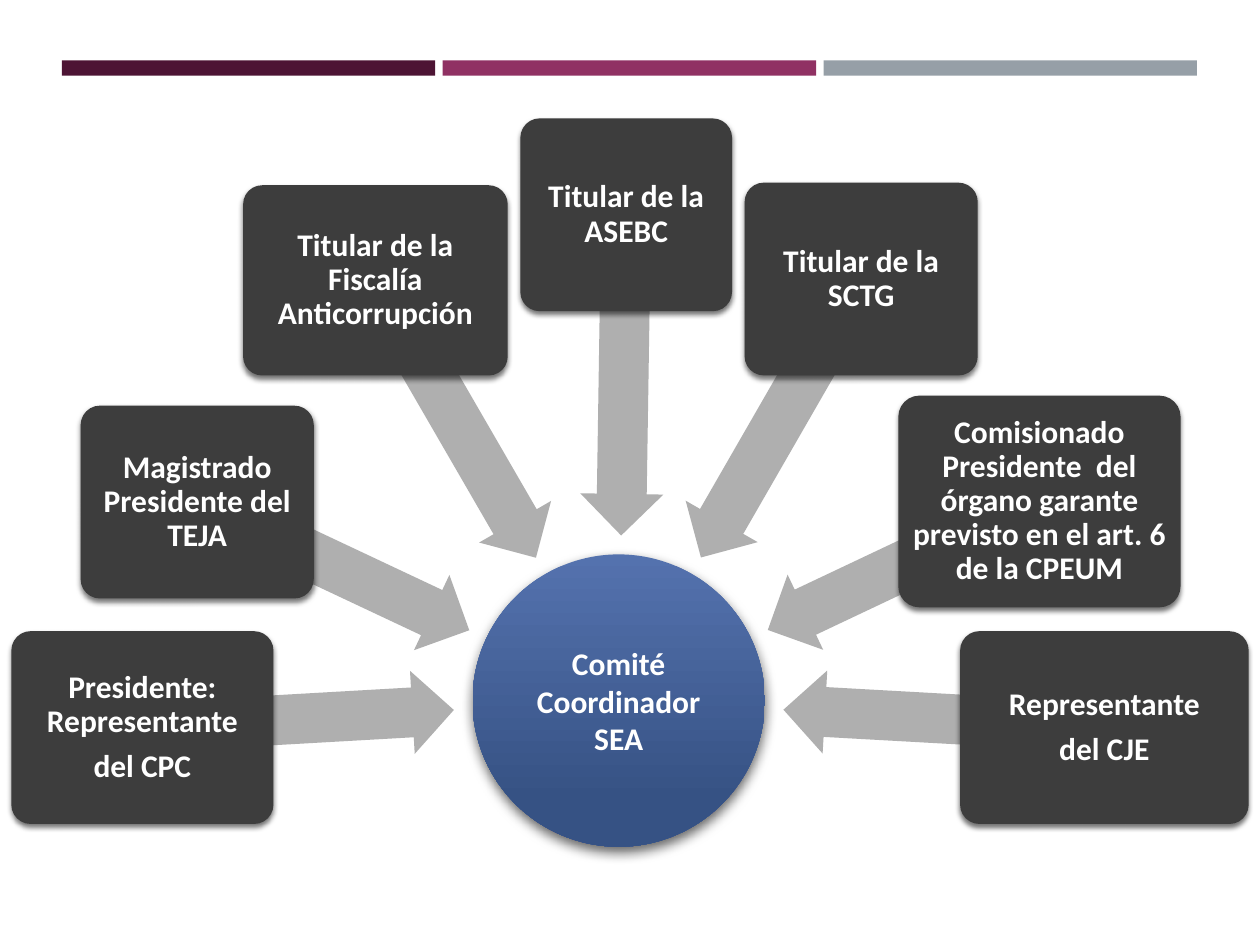
from dataclasses import dataclass
from math import atan2, cos, degrees, hypot, sin

from lxml import etree
from pptx import Presentation
from pptx.dml.color import RGBColor
from pptx.enum.shapes import MSO_SHAPE as Shape
from pptx.enum.text import MSO_ANCHOR as Anchor, PP_ALIGN as Align
from pptx.oxml.ns import qn
from pptx.util import Inches, Pt


@dataclass(frozen=True)
class Theme:
    font: str = "Calibri"
    size: float = 18
    text: str = "FFFFFF"
    bars: tuple = ("4D1434", "903163", "969FA7")
    member: str = "3D3D3D"
    arrow: str = "AFAFAF"
    hub: tuple = ((0, "5472AE"), (0.84, "365284"))


THEME = Theme()

# Left, top, width, height inside the diagram, then the paragraphs
MEMBERS = [
    (0, 4.07, 2.08, 1.53, ["Presidente: Representante", "del CPC"]),
    (0.55, 2.28, 1.85, 1.53, ["Magistrado Presidente del TEJA"]),
    (1.84, 0.53, 2.10, 1.51, ["Titular de la Fiscalía Anticorrupción"]),
    (4.04, 0, 1.68, 1.53, ["Titular de la ASEBC"]),
    (5.82, 0.51, 1.85, 1.53, ["Titular de la SCTG"]),
    (7.04, 2.20, 2.24, 1.68,
     ["Comisionado Presidente  del órgano garante previsto en el art. 6 de la CPEUM"]),
    (7.53, 4.07, 2.29, 1.53, ["Representante", "del CJE"]),
]
HUB_LEFT, HUB_TOP, HUB_SIZE = 3.66, 3.46, 2.32
ARROW_HEIGHT = 0.66
ARROW_STOP = 1.31  # distance from the hub centre to each arrow tip


def add_block(slide, kind, left, top, width, height, color=None):
    block = slide.shapes.add_shape(
        kind, Inches(left), Inches(top), Inches(width), Inches(height))
    block.line.fill.background()
    block.shadow.inherit = False
    if color:
        block.fill.solid()
        block.fill.fore_color.rgb = RGBColor.from_string(color)
    return block


def add_shadow(block, opacity, blur, distance, angle):
    """Drop a black shadow; opacity in percent, lengths in points."""
    effects = block._element.spPr.find(qn("a:effectLst"))
    shadow = etree.SubElement(
        effects, qn("a:outerShdw"), blurRad=str(Pt(blur)), dist=str(Pt(distance)),
        dir=str(angle * 60000), rotWithShape="0")
    black = etree.SubElement(shadow, qn("a:srgbClr"), val="000000")
    etree.SubElement(black, qn("a:alpha"), val=str(opacity * 1000))


def write_text(block, lines, inset, line_spacing=1.0, space_after=0):
    frame = block.text_frame
    frame.word_wrap = True
    frame.vertical_anchor = Anchor.MIDDLE
    frame.margin_left = frame.margin_right = Inches(inset)
    frame.margin_top = frame.margin_bottom = Inches(inset)
    for index, line in enumerate(lines):
        paragraph = frame.add_paragraph() if index else frame.paragraphs[0]
        paragraph.text = line
        paragraph.alignment = Align.CENTER
        paragraph.line_spacing = line_spacing
        paragraph.space_after = Pt(space_after)
        paragraph.font.name = THEME.font
        paragraph.font.size = Pt(THEME.size)
        paragraph.font.bold = True
        paragraph.font.color.rgb = RGBColor.from_string(THEME.text)


def add_header_bars(slide, left, top, width, height, gap=0.06):
    bar_width = (width - gap * (len(THEME.bars) - 1)) / len(THEME.bars)
    for index, color in enumerate(THEME.bars):
        add_block(slide, Shape.RECTANGLE, left + index * (bar_width + gap), top,
                  bar_width, height, color)


def add_hub(slide, left, top, size):
    hub = add_block(slide, Shape.OVAL, left, top, size, size)
    hub.fill.gradient()
    hub.fill.gradient_angle = 270
    for stop, (position, color) in zip(hub.fill.gradient_stops, THEME.hub):
        stop.position = position
        stop.color.rgb = RGBColor.from_string(color)
    add_shadow(hub, 60, 7, 3, 84)
    write_text(hub, ["Comité Coordinador SEA"], 0.01)


def add_arrow(slide, start_x, start_y, hub_x, hub_y):
    """Point an arrow from a member's centre at the hub, stopping short of it."""
    dx, dy = hub_x - start_x, hub_y - start_y
    angle = atan2(dy, dx)
    length = hypot(dx, dy) - ARROW_STOP
    middle_x = start_x + cos(angle) * length / 2
    middle_y = start_y + sin(angle) * length / 2
    arrow = add_block(slide, Shape.LEFT_ARROW, middle_x - length / 2,
                      middle_y - ARROW_HEIGHT / 2, length, ARROW_HEIGHT, THEME.arrow)
    arrow.adjustments[0] = 0.6
    arrow.adjustments[1] = 0.5
    arrow.rotation = degrees(angle) + 180


def add_member(slide, left, top, width, height, lines):
    member = add_block(slide, Shape.ROUNDED_RECTANGLE, left, top, width, height,
                       THEME.member)
    member.adjustments[0] = 0.1
    add_shadow(member, 55, 3, 2, 90)
    write_text(member, lines, 0.04, line_spacing=0.9, space_after=0.35 * THEME.size)


def add_committee_diagram(slide, left, top):
    hub_left, hub_top = left + HUB_LEFT, top + HUB_TOP
    hub_x, hub_y = hub_left + HUB_SIZE / 2, hub_top + HUB_SIZE / 2
    add_hub(slide, hub_left, hub_top, HUB_SIZE)
    for x, y, width, height, lines in MEMBERS:
        member_left, member_top = left + x, top + y
        add_arrow(slide, member_left + width / 2, member_top + height / 2, hub_x, hub_y)
        add_member(slide, member_left, member_top, width, height, lines)


def main():
    deck = Presentation()
    deck.slide_width, deck.slide_height = Inches(10), Inches(7.5)
    slide = deck.slides.add_slide(deck.slide_layouts[6])
    add_header_bars(slide, 0.49, 0.48, 9.01, 0.12)
    add_committee_diagram(slide, 0.09, 0.94)
    deck.save("out.pptx")


if __name__ == "__main__":
    main()
